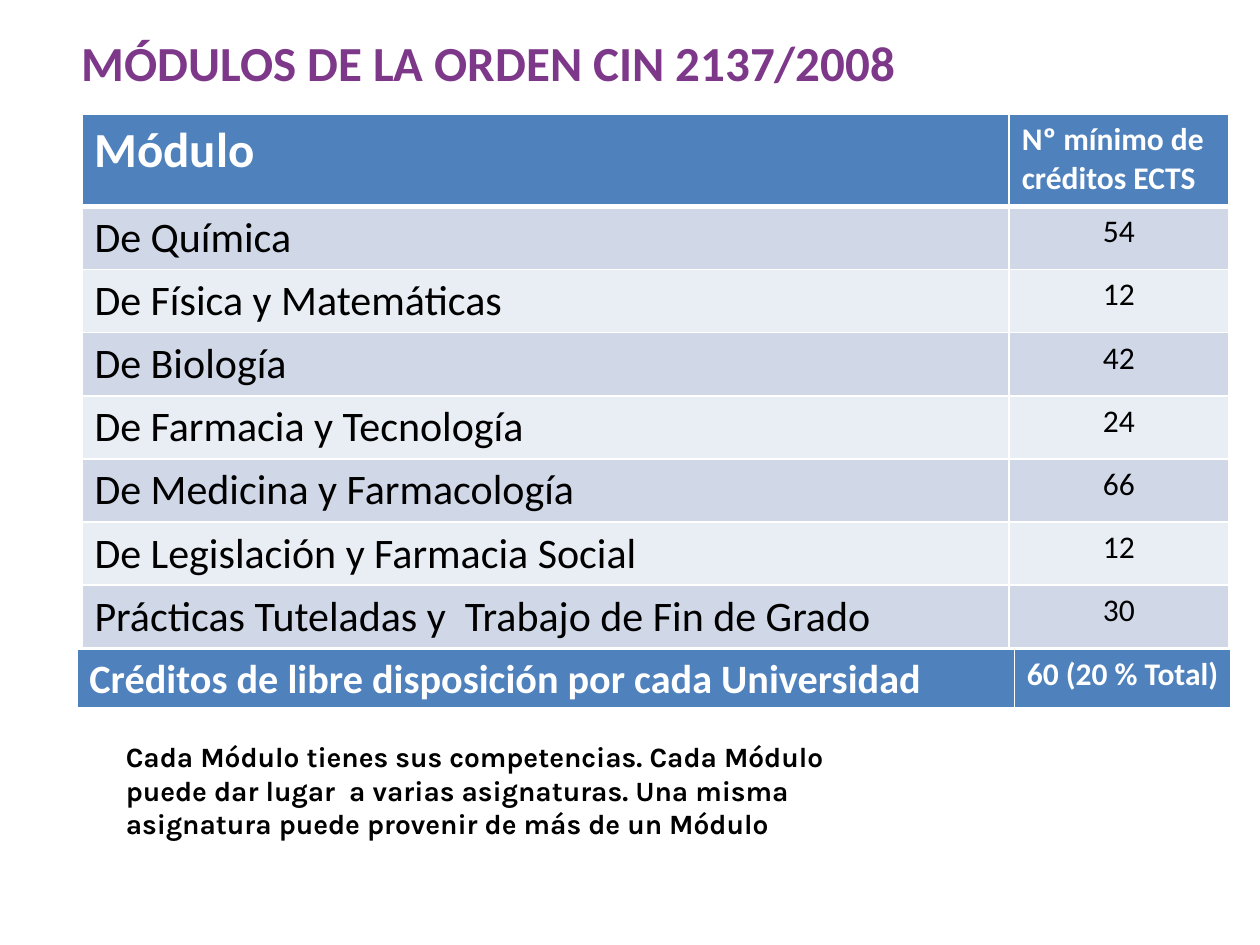
from pptx import Presentation
from pptx.dml.color import RGBColor
from pptx.enum.text import MSO_ANCHOR, PP_ALIGN
from pptx.oxml.ns import qn
from pptx.util import Inches, Pt
from lxml.etree import SubElement

TITLE = "MÓDULOS DE LA ORDEN CIN 2137/2008"
HEAD = ("Módulo", "Nº mínimo de\ncréditos ECTS")
ROWS = [
    ("De Química", "54"),
    ("De Física y Matemáticas", "12"),
    ("De Biología", "42"),
    ("De Farmacia y Tecnología", "24"),
    ("De Medicina y Farmacología", "66"),
    ("De Legislación y Farmacia Social", "12"),
    ("Prácticas Tuteladas y  Trabajo de Fin de Grado", "30"),
]
FREE = ("Créditos de libre disposición por cada Universidad", "60 (20 % Total)")
NOTE = ("Cada Módulo tienes sus competencias. Cada Módulo puede dar lugar  a varias "
        "asignaturas. Una misma asignatura puede provenir de más de un Módulo")

THEME = {
    "face": "Calibri", "note face": "Karla",
    "title": "7E388A", "dark": "000000", "light": "FFFFFF",
    "head": "4F81BD", "bands": ("D0D8E8", "E9EDF4"),
    "big": 28, "row": 24, "free": 23, "small": 18, "note": 16,
}
WIDE, TALL = 10, 7.5


def style(frame, size, color, bold, face=THEME["face"], align=PP_ALIGN.LEFT):
    for para in frame.paragraphs:
        para.alignment = align
        font = para.font
        font.name, font.size, font.bold = face, Pt(size), bold
        font.color.rgb = RGBColor.from_string(color)


def write(slide, text, area, anchor, *look):
    box = slide.shapes.add_textbox(*map(Inches, area))
    frame = box.text_frame
    frame.word_wrap = True
    frame.vertical_anchor = anchor
    frame.text = text
    style(frame, *look)


def edge(cell, base):
    props = cell._tc.get_or_add_tcPr()
    for side, width in (("L", 1), ("R", 1), ("T", 1), ("B", base)):
        line = SubElement(props, qn(f"a:ln{side}"), w=str(Pt(width)))
        fill = SubElement(line, qn("a:solidFill"))
        SubElement(fill, qn("a:srgbClr"), val=THEME["light"])


def paint(cell, text, fill, base, *look, align=PP_ALIGN.LEFT):
    cell.text = text
    style(cell.text_frame, *look, align=align)
    edge(cell, base)
    cell.fill.solid()
    cell.fill.fore_color.rgb = RGBColor.from_string(fill)


def grid(slide, left, top, cols, rows):
    shape = slide.shapes.add_table(len(rows), len(cols), Inches(left), Inches(top),
                                   Inches(sum(cols)), Inches(sum(rows)))
    table = shape.table
    table.horz_banding = False
    for col, width in zip(table.columns, cols):
        col.width = Inches(width)
    for row, height in zip(table.rows, rows):
        row.height = Inches(height)
    return table


def main():
    deck = Presentation()
    deck.slide_width, deck.slide_height = Inches(WIDE), Inches(TALL)
    slide = deck.slides.add_slide(deck.slide_layouts[6])
    small, light, head = THEME["small"], THEME["light"], THEME["head"]

    write(slide, TITLE, (0.55, 0.19, 0.7 * WIDE, 0.6), MSO_ANCHOR.MIDDLE,
          THEME["big"], THEME["title"], True)
    write(slide, NOTE, (0.9, 5.78, 6.22, 0.94), MSO_ANCHOR.BOTTOM,
          THEME["note"], THEME["dark"], True, THEME["note face"])

    table = grid(slide, 0.65, 0.91, (7.36, 1.74), [0.73] + [0.5] * len(ROWS))
    for col, size in enumerate((THEME["big"], small)):
        paint(table.cell(0, col), HEAD[col], head, 3, size, light, True)
    for num, (name, count) in enumerate(ROWS):
        band = THEME["bands"][num % 2]
        paint(table.cell(num + 1, 0), name, band, 1, THEME["row"], THEME["dark"], False)
        paint(table.cell(num + 1, 1), count, band, 1, small, THEME["dark"], False,
              align=PP_ALIGN.CENTER)

    total = grid(slide, 0.61, 5.15, (7.44, 1.72), [0.48])
    paint(total.cell(0, 0), FREE[0], head, 3, THEME["free"], light, True)
    paint(total.cell(0, 1), FREE[1], head, 3, small, light, True, align=PP_ALIGN.CENTER)
    deck.save("out.pptx")


if __name__ == "__main__":
    main()
